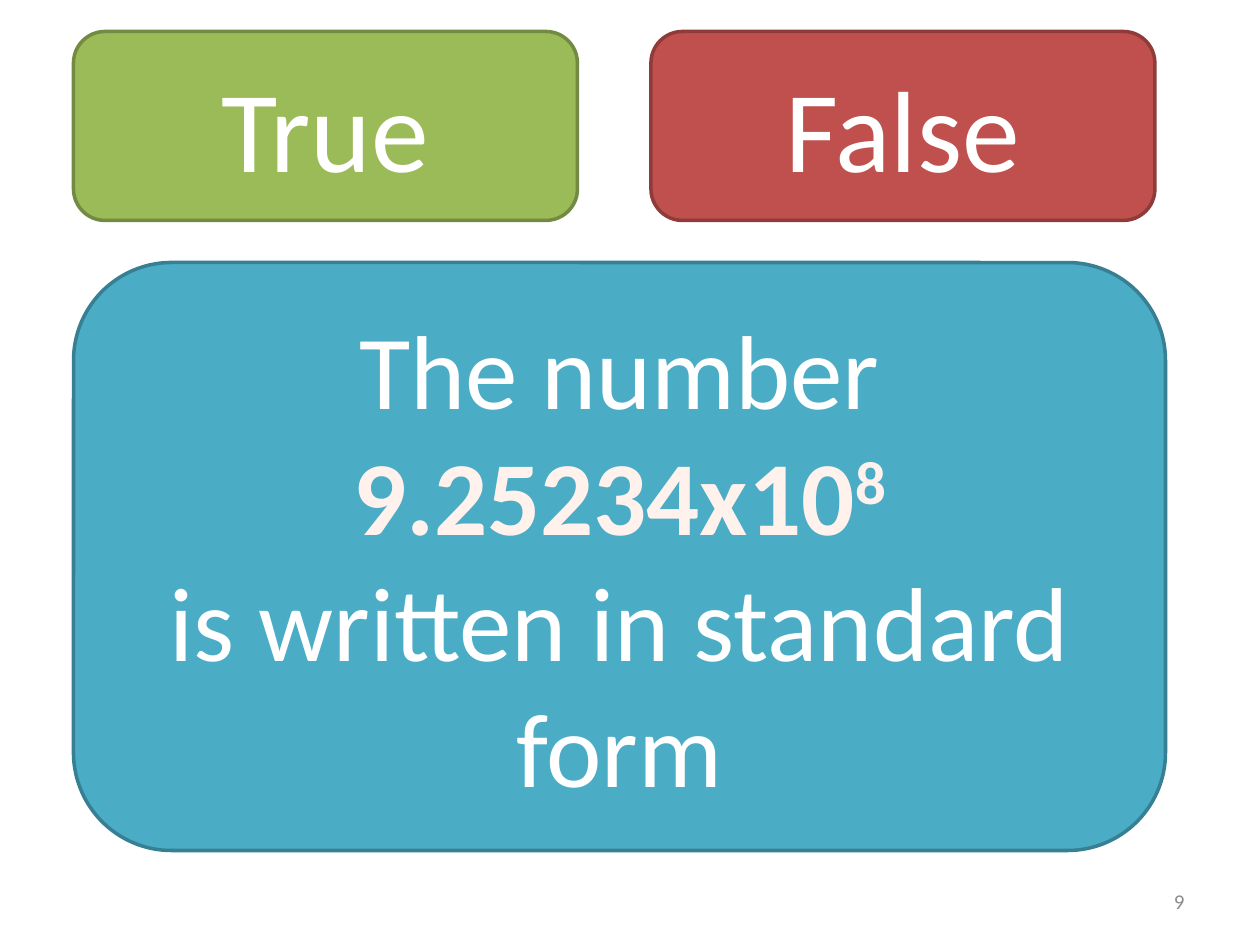
"""Build a true-or-false quiz slide about standard form."""
from dataclasses import dataclass

from pptx import Presentation
from pptx.dml.color import RGBColor as RGB
from pptx.enum.shapes import MSO_SHAPE as Shape
from pptx.enum.text import MSO_ANCHOR as Anchor, PP_ALIGN as Align
from pptx.util import Pt


@dataclass(frozen=True)
class Theme:
    font: str = "Calibri"
    white: str = "FFFFFF"
    cream: str = "FFF2ED"
    grey: str = "8C8C8C"
    green: tuple = ("9BBB59", "738A42")
    red: tuple = ("C0504D", "8E3B39")
    blue: tuple = ("4BACC6", "377F92")
    answer: int = 66
    claim: int = 60
    number: int = 12


theme = Theme()


def add_card(left, top, width, height, tones):
    card = slide.shapes.add_shape(
        Shape.ROUNDED_RECTANGLE, Pt(left), Pt(top), Pt(width), Pt(height))
    card.shadow.inherit = False
    fill, edge = tones
    card.fill.solid()
    card.fill.fore_color.rgb = RGB.from_string(fill)
    card.line.color.rgb = RGB.from_string(edge)
    card.line.width = Pt(2)
    frame = card.text_frame
    frame.word_wrap = True
    frame.vertical_anchor = Anchor.MIDDLE
    return frame


def style(para, size, color, align=Align.CENTER, bold=False):
    para.alignment = align
    font = para.font
    font.name, font.size, font.bold = theme.font, Pt(size), bold
    font.color.rgb = RGB.from_string(color)
    for run in para.runs:
        run.font.color.rgb = RGB.from_string(color)


deck = Presentation()
deck.slide_width, deck.slide_height = Pt(720), Pt(540)
slide = deck.slides.add_slide(deck.slide_layouts[6])

margin = 42
answers = [("True", theme.green), ("False", theme.red)]
for col, (word, tones) in enumerate(answers):
    frame = add_card(margin + col * 330, 18, 288, 108, tones)
    frame.text = word
    style(frame.paragraphs[0], theme.answer, theme.white)

claim = add_card(margin, 150, 624, 336, theme.blue)
claim.text = "The number\n9.25234x10\nis written in standard form"
first, value, last = claim.paragraphs
power = value.add_run()
power.text = "8"
power.font._element.set("baseline", "30000")
style(first, theme.claim, theme.white)
style(value, theme.claim, theme.cream, bold=True)
style(last, theme.claim, theme.white)

box = slide.shapes.add_textbox(Pt(516), Pt(500.5), Pt(168), Pt(28.75))
frame = box.text_frame
frame.word_wrap = True
frame.vertical_anchor = Anchor.MIDDLE
frame.text = "9"
style(frame.paragraphs[0], theme.number, theme.grey, Align.RIGHT)

deck.save("out.pptx")
